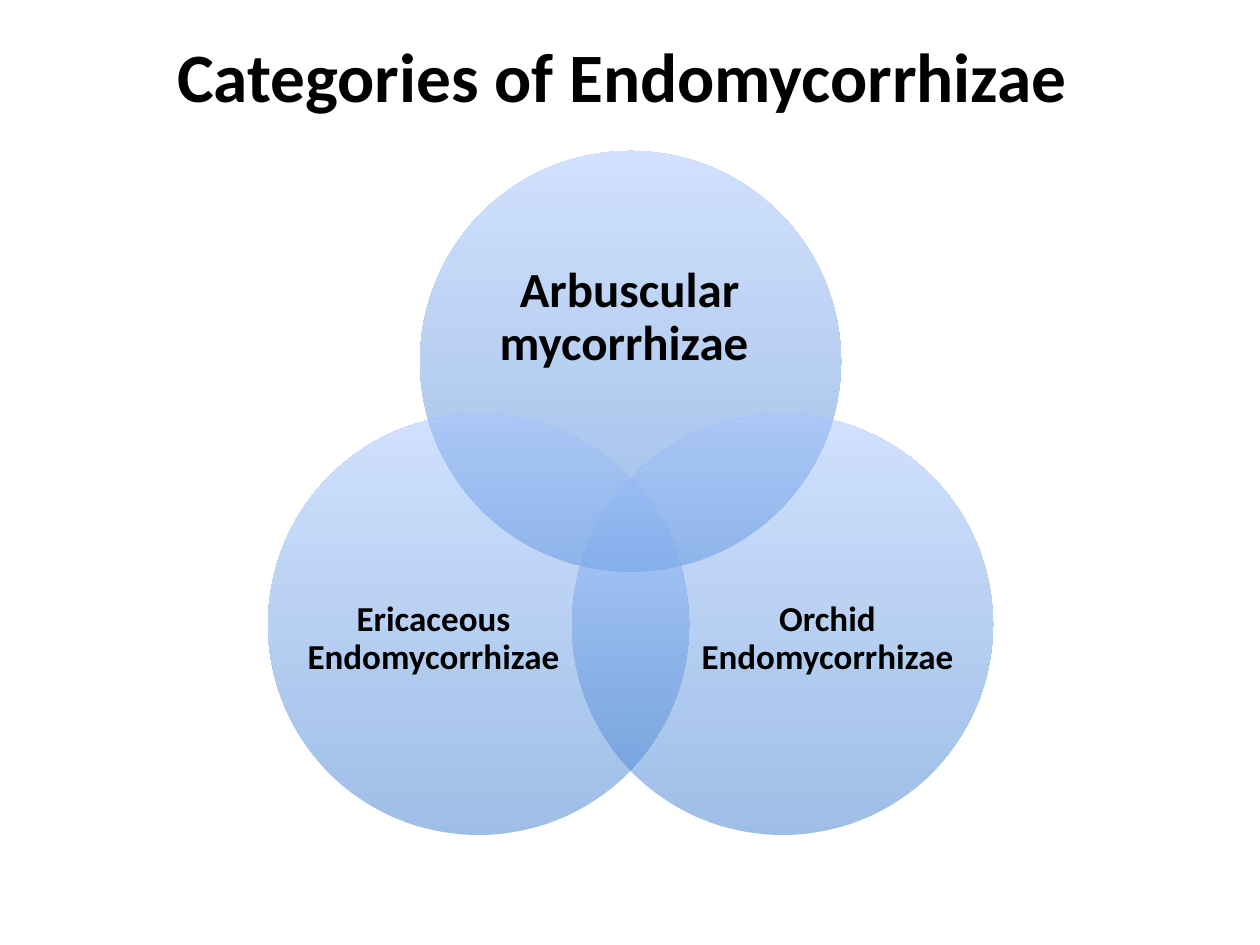
from lxml.etree import SubElement
from pptx import Presentation
from pptx.dml.color import RGBColor
from pptx.enum.shapes import MSO_SHAPE as Shape
from pptx.enum.text import MSO_ANCHOR as Anchor, PP_ALIGN as Align
from pptx.oxml.ns import qn
from pptx.util import Emu, Pt

BLACK = RGBColor(0x00, 0x00, 0x00)
DEEP_BLUE = RGBColor(0x3F, 0x7F, 0xCE)
PALE_BLUE = RGBColor(0xA4, 0xC4, 0xFF)


class VennSlide:
    """Draws a titled Venn diagram in one style, with lengths in px at 126 to the inch."""

    font_name = "Calibri"
    scale = 914400 / 126

    def __init__(self, deck):
        deck.slide_width, deck.slide_height = self.px(1260, 945)
        self.page = deck.slides.add_slide(deck.slide_layouts[5])
        self.group = None

    def px(self, *lengths):
        return [Emu(round(length * self.scale)) for length in lengths]

    def set_text(self, frame, text, size, margins):
        frame.text = text
        frame.word_wrap = True
        frame.vertical_anchor = Anchor.MIDDLE
        (frame.margin_left, frame.margin_top,
         frame.margin_right, frame.margin_bottom) = self.px(*margins)
        para = frame.paragraphs[0]
        para.alignment = Align.CENTER
        font = para.runs[0].font
        font.name, font.size, font.bold = self.font_name, Pt(size), True
        font.color.rgb = BLACK
        return para

    def title(self, text, left, top, width, height):
        box = self.page.shapes.title
        box.left, box.top, box.width, box.height = self.px(left, top, width, height)
        self.set_text(box.text_frame, text, 39.6, (13, 6, 13, 90))

    def start_group(self):
        self.group = self.page.shapes.add_group_shape()

    def circle(self, left, top, diameter):
        disc = self.group.shapes.add_shape(
            Shape.OVAL, *self.px(left, top, diameter, diameter))
        disc.shadow.inherit = False
        disc.line.fill.background()
        disc.fill.gradient()
        disc.fill.gradient_angle = 90
        for stop, color in zip(disc.fill.gradient_stops, (DEEP_BLUE, PALE_BLUE)):
            stop.color.rgb = color
        for color_node in disc.element.spPr.iter(qn("a:srgbClr")):
            SubElement(color_node, qn("a:alpha"), val="50000")

    def label(self, text, size, left, top, width, height):
        box = self.group.shapes.add_textbox(*self.px(left, top, width, height))
        para = self.set_text(box.text_frame, text, size, (0, 0, 0, 0))
        para.line_spacing = 0.9


def main():
    deck = Presentation()
    slide = VennSlide(deck)
    slide.title("Categories of Endomycorrhizae ", 63, 38, 1134, 157)

    slide.start_group()
    center, diameter, offset = 630, 421, 152
    upper, lower = 151, 414
    categories = [
        ("Arbuscular mycorrhizae ", 28, 0, upper, (475, 224, 309, 189)),
        ("Orchid Endomycorrhizae ", 20, offset, lower, (701, 523, 253, 232)),
        ("Ericaceous Endomycorrhizae ", 20, -offset, lower, (307, 523, 253, 232)),
    ]
    for text, size, shift, top, label_area in categories:
        slide.circle(center + shift - diameter // 2, top, diameter)
        slide.label(text, size, *label_area)

    deck.save("out.pptx")


if __name__ == "__main__":
    main()
